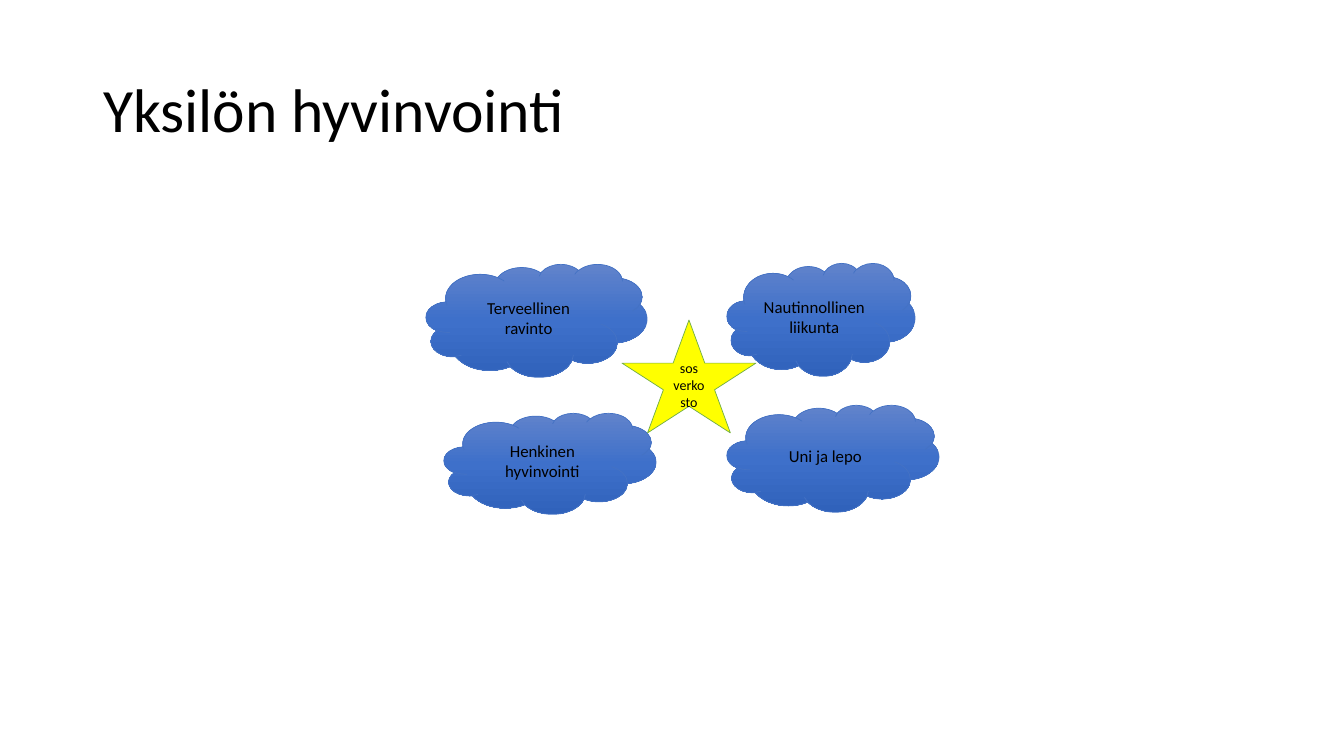
from copy import deepcopy
from dataclasses import dataclass

from pptx import Presentation
from pptx import util as u
from pptx.dml.color import RGBColor
from pptx.enum import shapes, text
from pptx.oxml.ns import qn

PX_PER_INCH = 100.8


@dataclass(frozen=True)
class Theme:
    font: str = "Calibri"
    ink: str = "000000"
    cloud_stops: tuple[tuple[float, str], ...] = (
        (0, "6183CB"), (0.5, "3E70CA"), (1, "3062BB"))
    cloud_line: str = "4472C4"
    star_fill: str = "FFFF00"
    star_line: str = "70AD47"
    line_width: float = 0.5
    title_size: int = 44
    cloud_size: int = 12
    star_size: int = 10


@dataclass(frozen=True)
class Box:
    left: int
    top: int
    width: int
    height: int

    def emu(self) -> list[int]:
        return [px(n) for n in (self.left, self.top, self.width, self.height)]


@dataclass(frozen=True)
class Cloud:
    label: str
    box: Box


THEME = Theme()
TITLE_BOX = Box(93, 40, 1159, 146)
STAR_BOX = Box(622, 320, 134, 113)
CLOUDS = (
    Cloud("Terveellinen ravinto", Box(426, 264, 221, 113)),
    Cloud("Nautinnollinen liikunta", Box(727, 263, 188, 113)),
    Cloud("Henkinen hyvinvointi", Box(444, 413, 212, 101)),
    Cloud("Uni ja lepo", Box(727, 405, 212, 107)),
)


def px(length: int) -> int:
    return u.Inches(length / PX_PER_INCH)


def write(shape, words: str, *, size: int, align=text.PP_ALIGN.CENTER,
          spacing: float = 1.0) -> None:
    frame = shape.text_frame
    frame.word_wrap = True
    frame.auto_size = text.MSO_AUTO_SIZE.NONE
    frame.vertical_anchor = text.MSO_ANCHOR.MIDDLE
    paragraph = frame.paragraphs[0]
    paragraph.alignment = align
    paragraph.line_spacing = spacing
    run = paragraph.add_run()
    run.text = words
    run.font.name = THEME.font
    run.font.size = u.Pt(size)
    run.font.color.rgb = RGBColor.from_string(THEME.ink)


def add_outlined(slide, kind, box: Box, line: str):
    shape = slide.shapes.add_shape(kind, *box.emu())
    shape.shadow.inherit = False
    shape.line.color.rgb = RGBColor.from_string(line)
    shape.line.width = u.Pt(THEME.line_width)
    return shape


def fill_gradient(shape, colours: tuple[tuple[float, str], ...]) -> None:
    shape.fill.gradient()
    shape.fill.gradient_angle = 270  # counter-clockwise: runs top to bottom
    stop_list = shape.element.spPr.find(qn("a:gradFill")).find(qn("a:gsLst"))
    while len(stop_list) < len(colours):
        stop_list.append(deepcopy(stop_list[0]))
    for stop, (position, colour) in zip(shape.fill.gradient_stops, colours):
        stop.position = position
        stop.color.rgb = RGBColor.from_string(colour)


def add_cloud(slide, cloud: Cloud) -> None:
    shape = add_outlined(slide, shapes.MSO_SHAPE.CLOUD, cloud.box, THEME.cloud_line)
    fill_gradient(shape, THEME.cloud_stops)
    write(shape, cloud.label, size=THEME.cloud_size)


def add_star(slide, label: str, box: Box) -> None:
    star = add_outlined(slide, shapes.MSO_SHAPE.STAR_5_POINT, box, THEME.star_line)
    star.fill.solid()
    star.fill.fore_color.rgb = RGBColor.from_string(THEME.star_fill)
    write(star, label, size=THEME.star_size)


def main() -> None:
    deck = Presentation()
    deck.slide_width, deck.slide_height = px(1344), px(756)
    slide = deck.slides.add_slide(deck.slide_layouts.get_by_name("Title Only"))

    # Title
    title = slide.shapes.title
    title.left, title.top, title.width, title.height = TITLE_BOX.emu()
    write(title, "Yksilön hyvinvointi", size=THEME.title_size,
          align=text.PP_ALIGN.LEFT, spacing=0.9)

    # Parts of wellbeing around the social network
    for cloud in CLOUDS:
        add_cloud(slide, cloud)
    add_star(slide, "sos verkosto", STAR_BOX)

    deck.save("out.pptx")


if __name__ == "__main__":
    main()
